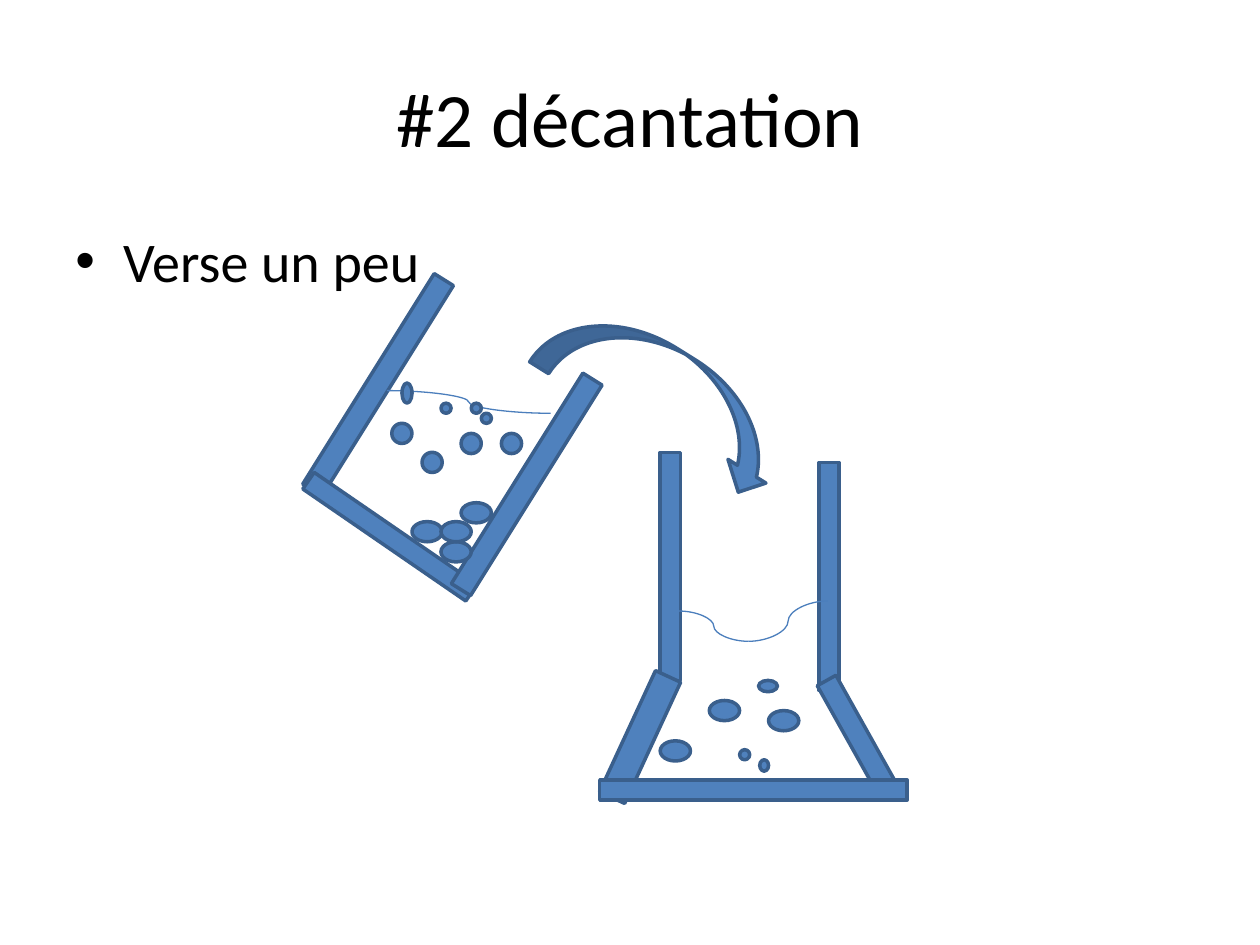
from lxml.etree import SubElement
from pptx import Presentation
from pptx.dml.color import RGBColor
from pptx.enum.shapes import MSO_CONNECTOR, MSO_SHAPE
from pptx.enum.text import MSO_ANCHOR, PP_ALIGN
from pptx.oxml.ns import qn
from pptx.util import Inches, Pt


def color(hex_string):
    return RGBColor.from_string(hex_string)


class SlideBuilder:
    FONT = "Calibri"
    TEXT = "000000"
    FILL = "4F81BD"
    OUTLINE = "3A5F8C"
    WATER = "4B7EBC"

    def __init__(self, presentation):
        self.slide = presentation.slides.add_slide(presentation.slide_layouts[5])

    def format_text(self, paragraph, size):
        for run in paragraph.runs:
            run.font.name = self.FONT
            run.font.size = Pt(size)
            run.font.color.rgb = color(self.TEXT)

    def title(self, text, left, top, width, height):
        shape = self.slide.shapes.title
        shape.left, shape.top = Inches(left), Inches(top)
        shape.width, shape.height = Inches(width), Inches(height)
        shape.text_frame.text = text
        shape.text_frame.vertical_anchor = MSO_ANCHOR.MIDDLE
        paragraph = shape.text_frame.paragraphs[0]
        paragraph.alignment = PP_ALIGN.CENTER
        self.format_text(paragraph, 44)

    def bullet(self, text, left, top, width, height):
        shape = self.slide.shapes.add_textbox(
            Inches(left), Inches(top), Inches(width), Inches(height))
        shape.text_frame.word_wrap = True
        paragraph = shape.text_frame.paragraphs[0]
        paragraph.text = text
        properties = paragraph._p.get_or_add_pPr()
        properties.set("marL", str(Inches(0.38)))
        properties.set("indent", str(Inches(-0.38)))
        SubElement(properties, qn("a:buFont"), typeface="Arial")
        SubElement(properties, qn("a:buChar"), char="•")
        self.format_text(paragraph, 32)

    def shape(self, kind, left, top, width, height, rotation=0):
        shape = self.slide.shapes.add_shape(
            kind, Inches(left), Inches(top), Inches(width), Inches(height))
        shape.rotation = rotation
        shape.shadow.inherit = False
        shape.fill.solid()
        shape.fill.fore_color.rgb = color(self.FILL)
        shape.line.color.rgb = color(self.OUTLINE)
        shape.line.width = Pt(2)

    def wall(self, *box):
        self.shape(MSO_SHAPE.RECTANGLE, *box)

    def grain(self, *box):
        self.shape(MSO_SHAPE.FLOWCHART_CONNECTOR, *box)

    def water(self, *ends):
        connector = self.slide.shapes.add_connector(
            MSO_CONNECTOR.CURVE, *[Inches(value) for value in ends])
        connector.line.color.rgb = color(self.WATER)
        connector.line.width = Pt(0.75)
        SubElement(connector._element.spPr, qn("a:effectLst"))


def main():
    presentation = Presentation()
    presentation.slide_width = Inches(10)
    presentation.slide_height = Inches(7.5)
    builder = SlideBuilder(presentation)

    # Text
    builder.title("#2 décantation", 0.5, 0.3, 9, 1.25)
    builder.bullet("Verse un peu", 0.5, 1.75, 9, 4.95)

    # Tilted beaker, then flask: left, top, width, height, rotation
    walls = [
        (2.91, 2.07, 0.18, 1.97, 32),
        (2.31, 4.18, 1.57, 0.16, 34.5),
        (4.09, 2.86, 0.18, 1.97, 32),
        (5.24, 3.59, 0.16, 1.81),
        (6.5, 3.67, 0.16, 1.81),
        (4.97, 5.32, 0.22, 1.06, 24.8),
        (6.71, 5.34, 0.17, 0.96, 330.8),
        (4.76, 6.19, 2.44, 0.16),
    ]
    for wall in walls:
        builder.wall(*wall)

    # Water surfaces: start and end points
    for surface in [(5.39, 4.85, 5.94, 5.09), (5.94, 5.09, 6.57, 4.77),
                    (3.07, 3.1, 4.37, 3.28)]:
        builder.water(*surface)

    # Pouring arrow
    builder.shape(MSO_SHAPE.CURVED_DOWN_ARROW, 4.23, 2.78, 2.13, 0.71, 32)

    # Grains, grouped by size: width, height -> positions
    grains = {
        (0.24, 0.16): [(5.24, 5.88), (5.63, 5.56), (6.1, 5.64), (3.27, 4.14),
                       (3.66, 3.99), (3.5, 4.3), (3.5, 4.14)],
        (0.16, 0.16): [(3.11, 3.36), (3.35, 3.59), (3.66, 3.44), (3.98, 3.44)],
        (0.08, 0.08): [(5.87, 5.95), (3.5, 3.2), (3.82, 3.28), (3.74, 3.2)],
        (0.15, 0.09): [(6.02, 5.4)],
        (0.07, 0.09): [(6.03, 6.03)],
        (0.08, 0.16): [(3.19, 3.04)],
    }
    for size, positions in grains.items():
        for position in positions:
            builder.grain(*position, *size)

    presentation.save("out.pptx")


if __name__ == "__main__":
    main()
